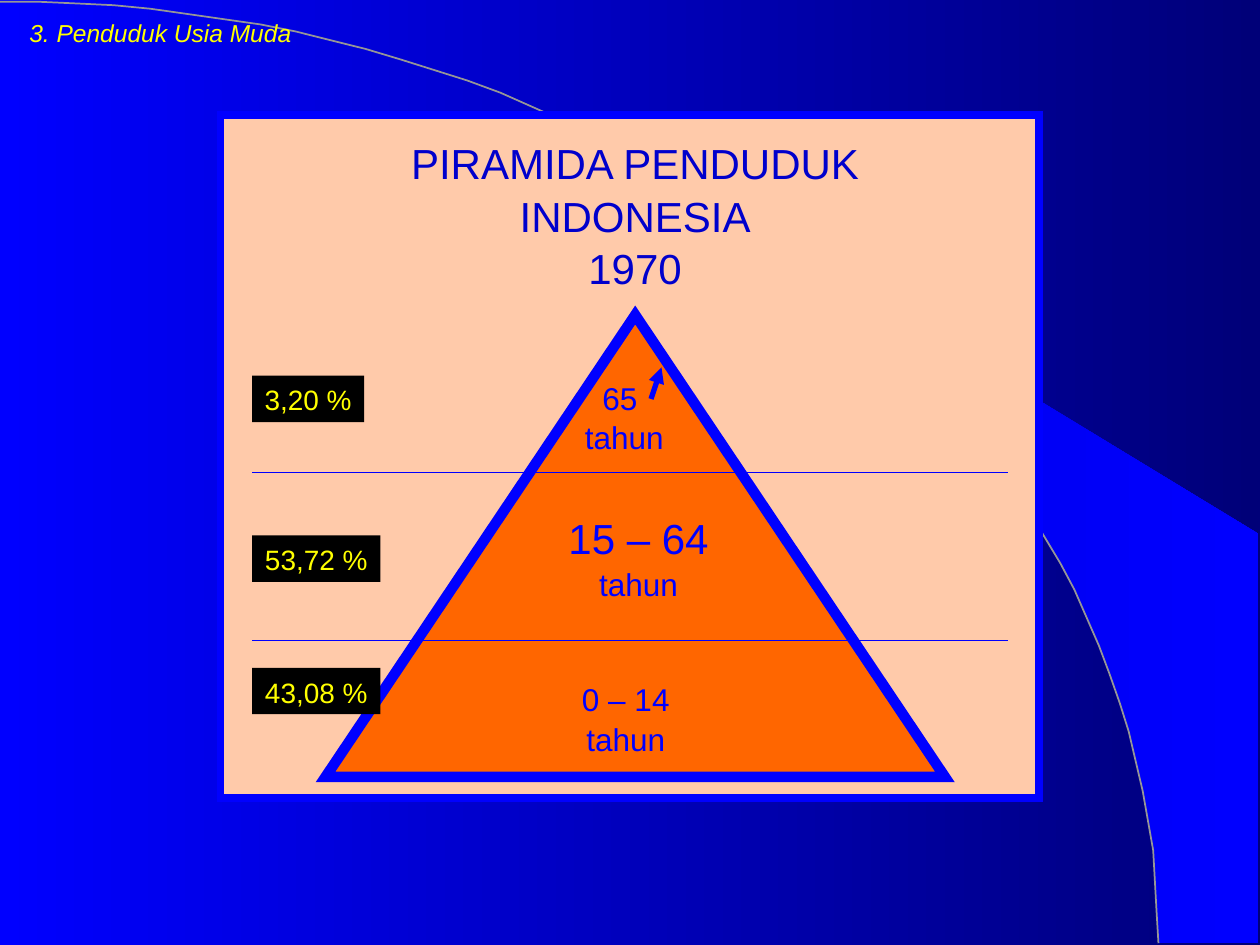
import pptx
import pptx.dml.color
import pptx.enum.shapes
import pptx.enum.text
import pptx.oxml.ns
import pptx.util
from lxml import etree

Pt = pptx.util.Pt
RGBColor = pptx.dml.color.RGBColor
Shape = pptx.enum.shapes.MSO_SHAPE

BLUE = RGBColor(0x00, 0x00, 0xFF)
NAVY = RGBColor(0x00, 0x00, 0x78)
WEDGE_BLUE = RGBColor(0x00, 0x00, 0xE7)
TITLE_BLUE = RGBColor(0x00, 0x00, 0xCC)
GRAY = RGBColor(0x96, 0x96, 0x96)
PEACH = RGBColor(0xFF, 0xCA, 0xAA)
ORANGE = RGBColor(0xFF, 0x66, 0x00)
BLACK = RGBColor(0x00, 0x00, 0x00)
YELLOW = RGBColor(0xFF, 0xFF, 0x00)

ARC_CONTROLS = [(0, 0.7), (365.8, 0.7), (661.7, 241.9), (661.7, 539.3)]
ARC_STEPS = 50
WEDGE_START = 22
WEDGE_CORNERS = [(719.3, 539.3), (719.3, 304.6)]


def add_xml(parent, tag, **attributes):
    return etree.SubElement(parent, pptx.oxml.ns.qn(tag), **attributes)


def set_gradient(fill, first, last):
    fill.gradient()
    fill.gradient_angle = 0
    for stop, color, position in zip(fill.gradient_stops, (first, last), (0, 1)):
        stop.color.rgb = color
        stop.position = position


def arc_point(t):
    weights = [(1 - t) ** 3, 3 * t * (1 - t) ** 2, 3 * t ** 2 * (1 - t), t ** 3]
    return tuple(
        sum(weight * point[axis] for weight, point in zip(weights, ARC_CONTROLS))
        for axis in (0, 1)
    )


def add_outline(page, points, close):
    builder = page.shapes.build_freeform(*points[0], scale=Pt(1))
    builder.add_line_segments(points[1:], close=close)
    outline = builder.convert_to_shape()
    outline.shadow.inherit = False
    return outline


def add_backdrop(page):
    set_gradient(page.background.fill, BLUE, NAVY)
    arc_points = [arc_point(step / ARC_STEPS) for step in range(ARC_STEPS + 1)]
    wedge = add_outline(page, arc_points[WEDGE_START:] + WEDGE_CORNERS, True)
    set_gradient(wedge.fill, WEDGE_BLUE, BLUE)
    wedge.line.fill.background()
    arc = add_outline(page, arc_points, False)
    arc.fill.background()
    arc.line.color.rgb = GRAY
    arc.line.width = Pt(1)


def add_shape(page, kind, left, top, width, height, fill, line_width=0):
    shape = page.shapes.add_shape(kind, Pt(left), Pt(top), Pt(width), Pt(height))
    shape.shadow.inherit = False
    shape.fill.solid()
    shape.fill.fore_color.rgb = fill
    if line_width:
        shape.line.color.rgb = BLUE
        shape.line.width = Pt(line_width)
        add_xml(shape.line._get_or_add_ln(), "a:miter", lim="800000")
    else:
        shape.line.fill.background()
    return shape


def add_line(page, start, end, width, arrow=False):
    line = page.shapes.add_connector(
        pptx.enum.shapes.MSO_CONNECTOR.STRAIGHT, *map(Pt, start + end)
    )
    line.line.color.rgb = BLUE
    line.line.width = Pt(width)
    if arrow:
        add_xml(line.line._get_or_add_ln(), "a:tailEnd", type="triangle")
    add_xml(line._element.spPr, "a:effectLst")


def write_text(box, text, sizes, color, italic=False):
    frame = box.text_frame
    frame.word_wrap = False
    for index, (words, size) in enumerate(zip(text.split("\n"), sizes)):
        para = frame.add_paragraph() if index else frame.paragraphs[0]
        para.alignment = pptx.enum.text.PP_ALIGN.CENTER
        para.line_spacing = 1.05
        span = para.add_run()
        span.text = words
        span.font.name = "Arial"
        span.font.size = Pt(size)
        span.font.color.rgb = color
        span.font.italic = italic


def add_text(page, left, top, width, height, text, **text_format):
    box = page.shapes.add_textbox(Pt(left), Pt(top), Pt(width), Pt(height))
    write_text(box, text, **text_format)


def add_share_label(page, top, width, text):
    label = add_shape(page, Shape.RECTANGLE, 144, top, width, 26.6, BLACK)
    write_text(label, text, sizes=[16], color=YELLOW)


def main():
    deck = pptx.Presentation()
    deck.slide_width, deck.slide_height = Pt(720), Pt(540)
    page = deck.slides.add_slide(deck.slide_layouts[6])
    add_backdrop(page)

    add_shape(page, Shape.RECTANGLE, 126, 66, 468, 390, PEACH, 4.5)
    add_shape(page, Shape.ISOSCELES_TRIANGLE, 186, 180, 354, 264, ORANGE, 6)
    for height in (366, 270):
        add_line(page, (144, height), (576, height), 0.75)

    add_text(page, 325.2, 384, 64.8, 50.4, "0 – 14\ntahun", sizes=[18, 18], color=BLUE)
    add_text(page, 317, 288, 95.8, 58.3, "15 – 64\ntahun", sizes=[24, 18], color=BLUE)
    add_text(page, 326.9, 211.7, 59.8, 51, "65 \ntahun", sizes=[18, 18], color=BLUE)
    add_line(page, (372, 228), (378, 210), 3, arrow=True)
    add_text(page, 226.5, 73.4, 272.9, 94.3, "PIRAMIDA PENDUDUK\nINDONESIA\n1970",
             sizes=[24] * 3, color=TITLE_BLUE)

    for top, width, text in ((214.6, 64.1, "3,20 %"),
                             (306, 73.4, "53,72 %"),
                             (381.6, 73.4, "43,08 %")):
        add_share_label(page, top, width, text)

    add_text(page, 6, 6, 171.4, 24, "3. Penduduk Usia Muda",
             sizes=[14], color=YELLOW, italic=True)
    deck.save("out.pptx")


if __name__ == "__main__":
    main()
